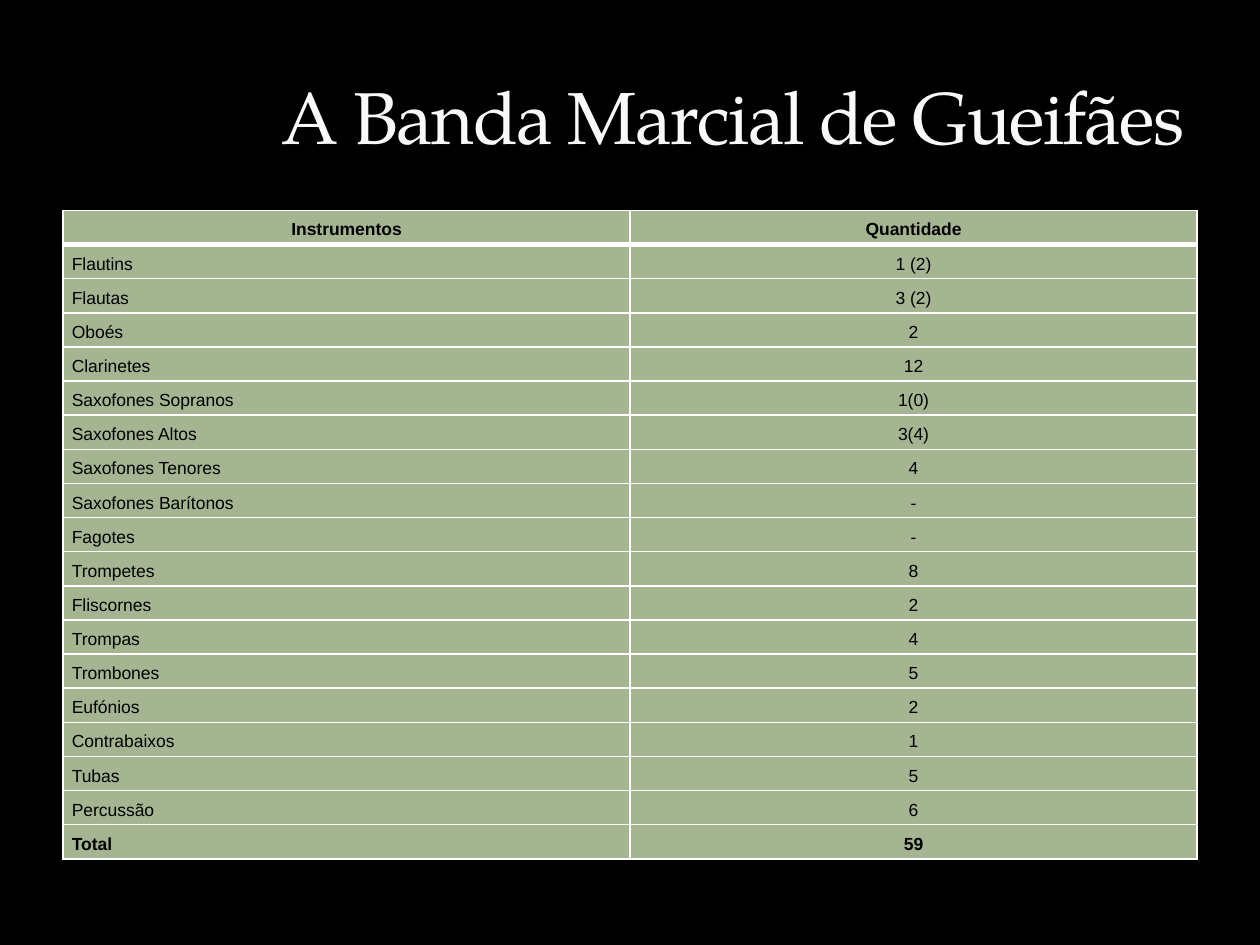
from lxml import etree
from pptx import Presentation, util as u
from pptx.dml.color import RGBColor
from pptx.enum import text
from pptx.oxml import ns

HUES = {"back": "000000", "title": "F9F9F9", "cell": "A5B592",
        "ink": "000000", "rule": "FFFFFF"}
WIDE, HIGH = u.Inches(10), u.Inches(7.5)
ROWS = [
    ("Instrumentos", "Quantidade"), ("Flautins", "1 (2)"), ("Flautas", "3 (2)"),
    ("Oboés", "2"), ("Clarinetes", "12"), ("Saxofones Sopranos", "1(0)"),
    ("Saxofones Altos", "3(4)"), ("Saxofones Tenores", "4"),
    ("Saxofones Barítonos", "-"), ("Fagotes", "-"), ("Trompetes", "8"),
    ("Fliscornes", "2"), ("Trompas", "4"), ("Trombones", "5"),
    ("Eufónios", "2"), ("Contrabaixos", "1"), ("Tubas", "5"),
    ("Percussão", "6"), ("Total", "59"),
]
ALIGN = text.PP_ALIGN


def paint(fill, hue):
    """Fill with a solid named colour."""
    fill.solid()
    fill.fore_color.rgb = RGBColor.from_string(HUES[hue])


def write(para, words, face, size, hue, bold=False):
    """Add one styled run and return it."""
    run = para.add_run()
    run.text = words
    font = run.font
    font.name, font.size, font.bold = face, u.Pt(size), bold
    paint(font.fill, hue)
    return run


def edge(cell, top, base):
    """Rule the four sides of a cell, with top and base widths in points."""
    props = cell._tc.get_or_add_tcPr()
    for spot, (side, width) in enumerate(zip("LRTB", (1, 1, top, base))):
        line = etree.Element(ns.qn(f"a:ln{side}"), w=str(u.Pt(width)))
        fill = etree.SubElement(line, ns.qn("a:solidFill"))
        etree.SubElement(fill, ns.qn("a:srgbClr"), val=HUES["rule"])
        props.insert(spot, line)


def title(slide, box):
    """Place the heading at the lower right of its box."""
    frame = slide.shapes.add_textbox(*box).text_frame
    frame.word_wrap = True
    frame.vertical_anchor = text.MSO_ANCHOR.BOTTOM
    para = frame.paragraphs[0]
    para.alignment = ALIGN.RIGHT
    run = write(para, "A Banda Marcial de Gueifães", "TeX Gyre Pagella", 42, "title")
    run.font._element.set("spc", "-100")


def entry(cell, words, align, bold):
    """Set the fill, insets and wording of one cell."""
    paint(cell.fill, "cell")
    cell.margin_left = cell.margin_right = u.Inches(0.07)
    cell.margin_top = cell.margin_bottom = 0
    para = cell.text_frame.paragraphs[0]
    para.alignment, para.line_spacing = align, 1.5
    para.space_before, para.space_after = u.Pt(0.7), u.Pt(10)
    write(para, words, "Arial", 10, "ink", bold)


def roster(slide, box):
    """Fill the box with the table of instruments."""
    grid = slide.shapes.add_table(len(ROWS), len(ROWS[0]), *box).table
    last = len(ROWS) - 1
    for r, pair in enumerate(ROWS):
        grid.rows[r].height = box[3] // len(ROWS)
        for c, words in enumerate(pair):
            cell = grid.cell(r, c)
            align = ALIGN.CENTER if c or not r else ALIGN.JUSTIFY
            entry(cell, words, align, r in (0, last))
            edge(cell, 3 if r == 1 else 1, 3 if r == 0 else 1)


def main():
    """Build and save the slide."""
    deck = Presentation()
    deck.slide_width, deck.slide_height = WIDE, HIGH
    slide = deck.slides.add_slide(deck.slide_layouts[6])
    paint(slide.background.fill, "back")
    left, span = int(WIDE * 0.05), int(WIDE * 0.9)
    roster(slide, (left, u.Inches(1.67), span, u.Inches(5.15)))
    title(slide, (left, u.Inches(0.17), span, u.Inches(1.14)))
    deck.save("out.pptx")


if __name__ == "__main__":
    main()
